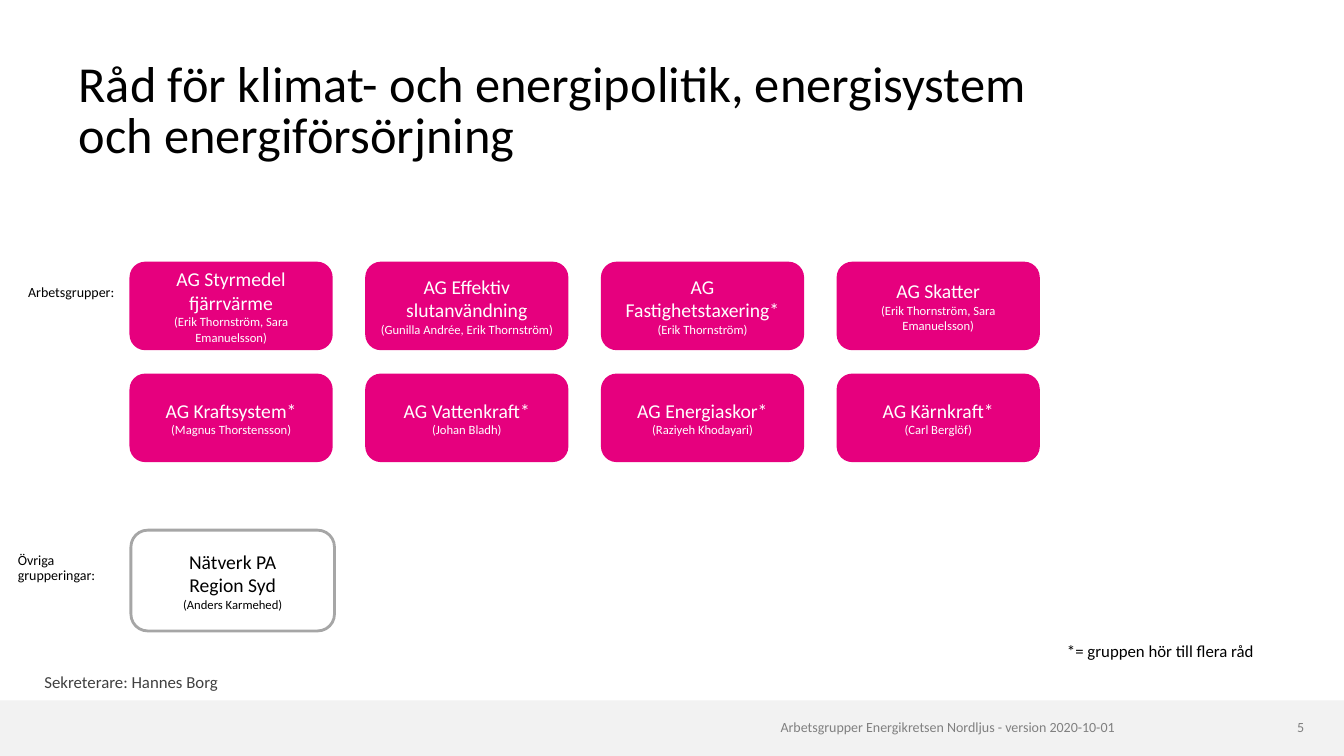
"""Build the slide of working groups under the council for climate and energy policy."""
from lxml import etree
from pptx import Presentation
from pptx.dml.color import RGBColor
from pptx.enum.shapes import MSO_SHAPE
from pptx.enum.text import MSO_ANCHOR, MSO_AUTO_SIZE, PP_ALIGN
from pptx.oxml.ns import qn
from pptx.util import Cm, Pt

LEFT, CENTER, RIGHT = PP_ALIGN.LEFT, PP_ALIGN.CENTER, PP_ALIGN.RIGHT
TOP, MIDDLE, BOTTOM = MSO_ANCHOR.TOP, MSO_ANCHOR.MIDDLE, MSO_ANCHOR.BOTTOM
RECTANGLE, ROUNDED = MSO_SHAPE.RECTANGLE, MSO_SHAPE.ROUNDED_RECTANGLE
NO_AUTOFIT = MSO_AUTO_SIZE.NONE
COLORS = {
    "pink": "E6007E", "white": "FFFFFF", "black": "000000", "band": "F2F2F2",
    "outline": "A6A6A6", "footer": "808080", "secretary": "404040",
}


def color(name):
    return RGBColor.from_string(COLORS[name])


def write(box, lines, ink, align=LEFT, anchor=TOP, inset=0.0, spacing=1.0, wrap=True):
    frame = box.text_frame
    frame_format = {
        "auto_size": NO_AUTOFIT, "word_wrap": wrap, "vertical_anchor": anchor,
        "margin_left": Cm(inset), "margin_right": Cm(inset),
        "margin_top": Cm(inset / 2), "margin_bottom": Cm(inset / 2),
    }
    for name, value in frame_format.items():
        setattr(frame, name, value)
    for index, (text, size) in enumerate(lines):
        para = frame.add_paragraph() if index else frame.paragraphs[0]
        para_format = {"alignment": align, "line_spacing": spacing, "space_before": Pt(0)}
        for name, value in para_format.items():
            setattr(para, name, value)
        span = para.add_run()
        span.text = text
        for name, value in {"name": "Calibri", "size": Pt(size)}.items():
            setattr(span.font, name, value)
        span.font.color.rgb = color(ink)


deck = Presentation()
deck.slide_width, deck.slide_height = Cm(33.87), Cm(19.05)
page = deck.slides.add_slide(deck.slide_layouts[1])
title, secretary = page.placeholders

band = page.shapes.add_shape(RECTANGLE, Cm(0), Cm(17.65), Cm(33.87), Cm(1.4))
band.shadow.inherit = False
band.fill.solid()
band.fill.fore_color.rgb = color("band")
band.line.fill.background()

placements = [
    (title, (1.98, 1.42, 24.1, 2.72)),
    (secretary, (1.12, 16.92, 12.34, 0.58)),
]
for box, place in placements:
    for name, value in zip(("left", "top", "width", "height"), place):
        setattr(box, name, Cm(value))

write(title, [("Råd för klimat- och energipolitik, energisystem och energiförsörjning", 36)],
      "black", anchor=BOTTOM, spacing=0.85)

bullet_format = secretary.text_frame.paragraphs[0]._p.get_or_add_pPr()
bullet_format.set("marL", "0")
bullet_format.set("indent", "0")
etree.SubElement(bullet_format, qn("a:buNone"))
write(secretary, [("Sekreterare: Hannes Borg", 12)], "secretary", anchor=MIDDLE, spacing=0.97)

groups = [
    [("AG Styrmedel fjärrvärme", "(Erik Thornström, Sara Emanuelsson)"),
     ("AG Effektiv slutanvändning", "(Gunilla Andrée, Erik Thornström)"),
     ("AG Fastighetstaxering*", "(Erik Thornström)"),
     ("AG Skatter", "(Erik Thornström, Sara Emanuelsson)")],
    [("AG Kraftsystem*", "(Magnus Thorstensson)"),
     ("AG Vattenkraft*", "(Johan Bladh)"),
     ("AG Energiaskor*", "(Raziyeh Khodayari)"),
     ("AG Kärnkraft*", "(Carl Berglöf)")],
]
cards = [
    ((3.3 + 5.94 * column, 6.63 + 2.82 * row, 5.05, 2.16),
     [(group, 14), (leaders, 9)], "pink", "pink", "white")
    for row, row_groups in enumerate(groups)
    for column, (group, leaders) in enumerate(row_groups)
]
cards.append(((3.3, 13.36, 5.13, 2.54),
              [("Nätverk PA", 14), ("Region Syd", 14), ("(Anders Karmehed)", 9)],
              None, "outline", "black"))
for place, lines, fill, outline, ink in cards:
    card = page.shapes.add_shape(ROUNDED, *map(Cm, place))
    card.shadow.inherit = False
    if fill:
        card.fill.solid()
        card.fill.fore_color.rgb = color(fill)
    else:
        card.fill.background()
    card.line.color.rgb = color(outline)
    card.line.width = Pt(2)
    write(card, lines, ink, CENTER, MIDDLE, inset=0.25)

label_format = {"ink": "black", "inset": 0.25, "spacing": 0.9}
footer_format = {"ink": "footer", "align": RIGHT}
labels = [
    ("Arbetsgrupper:", 10, (0.46, 7.06, 3.07, 0.53), label_format),
    ("Övriga grupperingar:", 10, (0.2, 13.82, 3.07, 1.02), label_format),
    ("*= gruppen hör till flera råd", 12, (26.64, 16.08, 5.26, 0.71),
     {**label_format, "wrap": False}),
    ("Arbetsgrupper Energikretsen Nordljus - version 2020-10-01", 10,
     (5.59, 18.11, 22.5, 0.48), footer_format),
    ("5", 10, (31.88, 18.11, 0.99, 0.48), footer_format),
]
for text, size, place, text_format in labels:
    label = page.shapes.add_textbox(*map(Cm, place))
    write(label, [(text, size)], **text_format)

deck.save("out.pptx")
